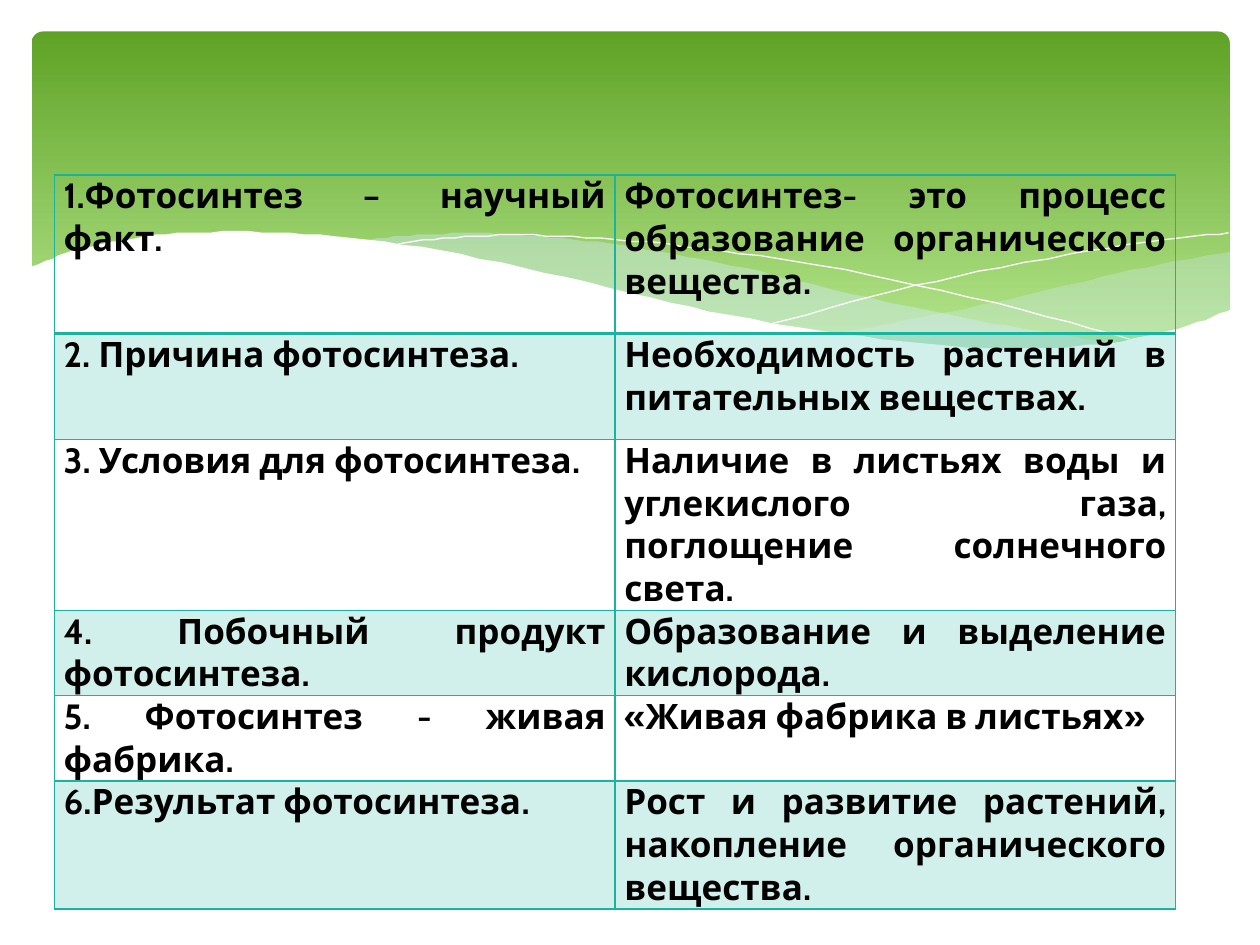
from lxml import etree
from pptx import Presentation
from pptx.dml.color import RGBColor
from pptx.enum.shapes import MSO_SHAPE
from pptx.enum.text import PP_ALIGN
from pptx.oxml.ns import qn
from pptx.util import Pt

ROUNDED = MSO_SHAPE.ROUNDED_RECTANGLE
JUSTIFY = PP_ALIGN.JUSTIFY

# Content
FONT, TEXT_SIZE = "Cabin", 20
TEAL, WHITE, MIST, BLACK = "1AB39F", "FFFFFF", "D6ECFF", "000000"
BAND_GRADIENT = [(0, "5FA326"), (0.9, "B2E389")]
ROWS = [
    (90.7, "1.Фотосинтез – научный факт.",
     "Фотосинтез- это процесс образование органического вещества."),
    (60.5, "2. Причина фотосинтеза.",
     "Необходимость растений в питательных веществах."),
    (72, "3. Условия для фотосинтеза.",
     "Наличие в листьях воды и углекислого газа, поглощение солнечного света."),
    (36.7, "4. Побочный продукт фотосинтеза.",
     "Образование и выделение кислорода."),
    (35.3, "5. Фотосинтез - живая фабрика.", "«Живая фабрика в листьях»"),
    (62.6, "6.Результат фотосинтеза.",
     "Рост и развитие растений, накопление органического вещества."),
]
TABLE_LEFT, TABLE_TOP, COLUMN_WIDTH = 31, 100, 320.4

# Wave edges: knots of smooth curves, in points
RIGHT_TOP = [(702.7, 144), (663, 151), (620, 160.6), (561, 174.2), (508, 185),
             (476, 190.8)]
RIGHT_BOTTOM = [(476, 190.8), (517.7, 195.8), (553.7, 199.4), (586, 200.2),
                (615, 198.7), (645.8, 194.4), (673, 188.6), (702.7, 177.8)]
MIDDLE_TOP = [(643, 196.6), (602.6, 190.8), (558, 182.9), (508.3, 172.8),
              (452.9, 159.8), (409.7, 149.8), (370, 142.6), (334.8, 137.5),
              (302.4, 134.6), (273.6, 133.2), (247.7, 133.9), (225.4, 135.4),
              (205.9, 137.5)]
MIDDLE_BOTTOM = [(205.9, 137.5), (246.2, 143.3), (290.9, 151.9), (323.3, 159.8),
                 (381.6, 172.8), (432.7, 183.6), (478.8, 191.5), (519.8, 197.3),
                 (556.6, 199.4), (589, 200.2), (617, 199.4), (643, 196.6)]
FALLING_LINE = [(222.5, 140.4), (247.7, 136.8), (278.6, 134.6), (311.8, 134.6),
                (352, 136.8), (400.3, 141.8), (457.9, 149.8), (523.4, 162.7),
                (598.3, 180.7), (653, 195.8)]
RISING_LINE = [(441.4, 185), (500.4, 169.2), (558.7, 155.5), (623.5, 143.3),
               (665.3, 136.8), (702, 133.2)]
WHITE_EDGE = [(703.4, 177.1), (684, 184.3), (655.2, 192.2), (621.4, 197.3),
              (582.5, 199.4), (535.7, 197.3), (481, 190.8), (416.9, 180),
              (362.2, 167.8), (321.8, 158.4), (262.8, 145.4), (210.2, 136.8),
              (165.6, 133.2), (127.4, 132.5), (95, 133.9), (68.4, 137.5),
              (48.2, 141.8), (33.1, 146.2), (16.6, 153.4)]
WHITE_BASE = [(16.6, 236.9), (703.4, 236.9)]


def color(value):
    return RGBColor.from_string(value)


def set_fill(fill, value, opacity=100):
    fill.solid()
    fill.fore_color.rgb = color(value)
    if opacity < 100:
        tone = fill._xPr.find(qn("a:solidFill"))[0]
        etree.SubElement(tone, qn("a:alpha"), val=str(opacity * 1000))


def smooth(knots, steps=5):
    """Points of a Catmull-Rom curve through the knots."""
    padded = [knots[0], *knots, knots[-1]]
    points = [knots[0]]
    for a, b, c, d in zip(padded, padded[1:], padded[2:], padded[3:]):
        for step in range(1, steps + 1):
            t = step / steps
            points.append(tuple(
                q + t * (r - p + t * (2 * p - 5 * q + 4 * r - s
                                      + t * (3 * (q - r) + s - p))) / 2
                for p, q, r, s in zip(a, b, c, d)))
    return points


def add_wave(page, points, fill=None, opacity=100, line=None):
    builder = page.shapes.build_freeform(*points[0], scale=Pt(1))
    builder.add_line_segments(points[1:], close=fill is not None)
    wave = builder.convert_to_shape()
    wave.shadow.inherit = False
    if fill:
        set_fill(wave.fill, fill, opacity)
    else:
        wave.fill.background()
    if line:
        set_fill(wave.line.fill, line)
        wave.line.width = Pt(0)
    else:
        wave.line.fill.background()


def set_borders(cell, widths):
    properties = cell._tc.get_or_add_tcPr()
    for place, (side, width) in enumerate(widths.items()):
        border = etree.Element(qn("a:" + side), w=str(Pt(width)))
        solid = etree.SubElement(border, qn("a:solidFill"))
        etree.SubElement(solid, qn("a:srgbClr"), val=TEAL)
        properties.insert(place, border)


def fill_cell(cell, text, row):
    cell.margin_left = cell.margin_right = Pt(5.4)
    cell.margin_top = cell.margin_bottom = Pt(0)
    para = cell.text_frame.paragraphs[0]
    para.alignment = JUSTIFY
    span = para.add_run()
    span.text = text
    span.font.name, span.font.size, span.font.bold = FONT, Pt(TEXT_SIZE), True
    span.font.color.rgb = color(BLACK)
    if row % 2:
        set_fill(cell.fill, TEAL, 20)
    else:
        cell.fill.background()
    set_borders(cell, {"lnL": 1, "lnR": 1, "lnT": 2 if row == 1 else 1,
                       "lnB": 2 if row == 0 else 1})


deck = Presentation()
deck.slide_width, deck.slide_height = Pt(720), Pt(540)
page = deck.slides.add_slide(deck.slide_layouts[6])

# Green band
band = page.shapes.add_shape(ROUNDED, Pt(18), Pt(18), Pt(684.7), Pt(194.4))
band.adjustments[0] = 0.034
band.shadow.inherit = False
band.line.fill.background()
band.fill.gradient()
band.fill.gradient_angle = 270
for stop, (position, value) in zip(band.fill.gradient_stops, BAND_GRADIENT):
    stop.position = position
    stop.color.rgb = color(value)

# Waves over the band
add_wave(page, smooth(RIGHT_TOP) + smooth(RIGHT_BOTTOM), MIST, 29)
add_wave(page, smooth(MIDDLE_TOP) + smooth(MIDDLE_BOTTOM), MIST, 40)
for curve in (FALLING_LINE, RISING_LINE):
    add_wave(page, smooth(curve), line=WHITE)
add_wave(page, smooth(WHITE_EDGE) + WHITE_BASE, WHITE)

# Table
frame = page.shapes.add_table(
    len(ROWS), 2, Pt(TABLE_LEFT), Pt(TABLE_TOP), Pt(2 * COLUMN_WIDTH),
    Pt(sum(height for height, *texts in ROWS)))
table = frame.table
table.first_row = table.horz_banding = False
for column in table.columns:
    column.width = Pt(COLUMN_WIDTH)
for row, (height, *texts) in enumerate(ROWS):
    table.rows[row].height = Pt(height)
    for column, text in enumerate(texts):
        fill_cell(table.cell(row, column), text, row)

deck.save("out.pptx")
